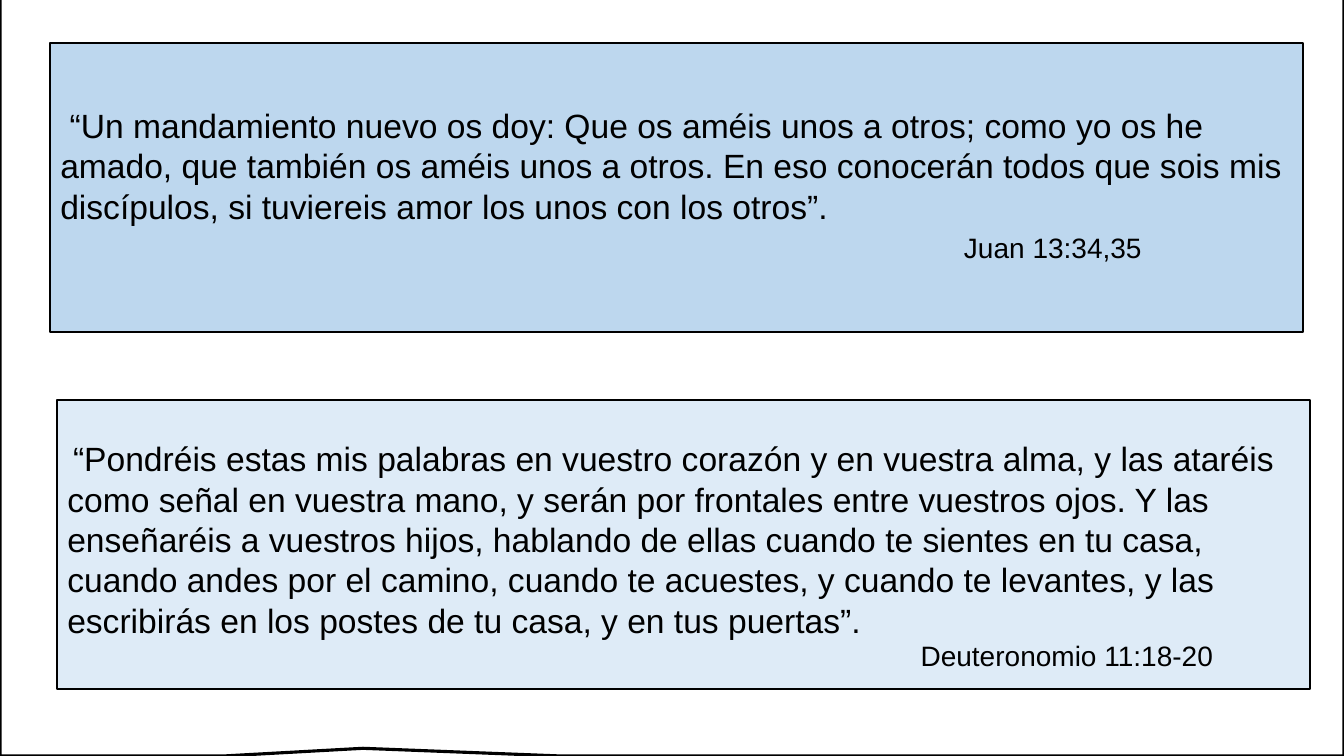
from pptx import Presentation
from pptx.dml.color import RGBColor
from pptx.enum.shapes import MSO_SHAPE
from pptx.enum.text import MSO_ANCHOR, PP_ALIGN
from pptx.util import Pt

BLACK = RGBColor(0x00, 0x00, 0x00)
WHITE = RGBColor(0xFF, 0xFF, 0xFF)
SKY_BLUE = RGBColor(0xBD, 0xD7, 0xEE)
PALE_BLUE = RGBColor(0xDE, 0xEB, 0xF7)

COMMANDMENT = (
    "“Un mandamiento nuevo os doy: Que os améis unos a otros; como yo os he "
    "amado, que también os améis unos a otros. En eso conocerán todos que sois "
    "mis discípulos, si tuviereis amor los unos con los otros”."
)
TEACHING = (
    "“Pondréis estas mis palabras en vuestro corazón y en vuestra alma, y las "
    "ataréis como señal en vuestra mano, y serán por frontales entre vuestros "
    "ojos. Y las enseñaréis a vuestros hijos, hablando de ellas cuando te sientes "
    "en tu casa, cuando andes por el camino, cuando te acuestes, y cuando te "
    "levantes, y las escribirás en los postes de tu casa, y en tus puertas”."
)


def write_text(paragraph, text, *, size, line_height, font="Arial", color=BLACK,
               margin=0, indent=0, space_before=0):
    paragraph.alignment = PP_ALIGN.LEFT
    paragraph.line_spacing = Pt(line_height)
    paragraph.space_before = Pt(space_before)
    properties = paragraph._p.get_or_add_pPr()
    properties.set("marL", str(Pt(margin)))
    properties.set("indent", str(Pt(indent)))
    run = paragraph.add_run()
    run.text = text
    run.font.name = font
    run.font.size = Pt(size)
    run.font.color.rgb = color


class VerseSlide:
    quote_size = 24
    quote_line = 28.8
    citation_size = 20
    citation_line = 23.2
    box_width = 895
    box_height = 206

    def __init__(self, presentation):
        self.slide = presentation.slides.add_slide(presentation.slide_layouts[6])

    def callout(self, left, top, width, height, tip, fill, line_width):
        shape = self.slide.shapes.add_shape(
            MSO_SHAPE.RECTANGULAR_CALLOUT, Pt(left), Pt(top), Pt(width), Pt(height))
        shape.adjustments[0], shape.adjustments[1] = tip
        shape.shadow.inherit = False
        shape.fill.solid()
        shape.fill.fore_color.rgb = fill
        shape.line.color.rgb = BLACK
        shape.line.width = Pt(line_width)
        return shape

    def verse(self, left, top, fill, quote, citation, *, text_top, quote_indent,
              citation_margin, citation_gap):
        shape = self.callout(left, top, self.box_width, self.box_height,
                             (-0.2, 0.5), fill, 1.5)
        frame = shape.text_frame
        frame.word_wrap = True
        frame.vertical_anchor = MSO_ANCHOR.TOP
        frame.margin_top = Pt(text_top)
        frame.margin_bottom = Pt(0)
        write_text(frame.paragraphs[0], quote, size=self.quote_size,
                   line_height=self.quote_line, indent=quote_indent)
        write_text(frame.add_paragraph(), citation, size=self.citation_size,
                   line_height=self.citation_line, margin=citation_margin,
                   space_before=citation_gap)


def main():
    presentation = Presentation()
    presentation.slide_width = Pt(960)
    presentation.slide_height = Pt(540)
    page = VerseSlide(presentation)
    page.callout(0, -5, 960, 545, (-0.23, 0.49), WHITE, 2.25)
    page.verse(36, 31, SKY_BLUE, COMMANDMENT, "Juan 13:34,35", text_top=44,
               quote_indent=6.7, citation_margin=645.5, citation_gap=4)
    page.verse(41, 286, PALE_BLUE, TEACHING, "Deuteronomio 11:18-20", text_top=27,
               quote_indent=4.1, citation_margin=609.5, citation_gap=0)
    presentation.save("out.pptx")


if __name__ == "__main__":
    main()
